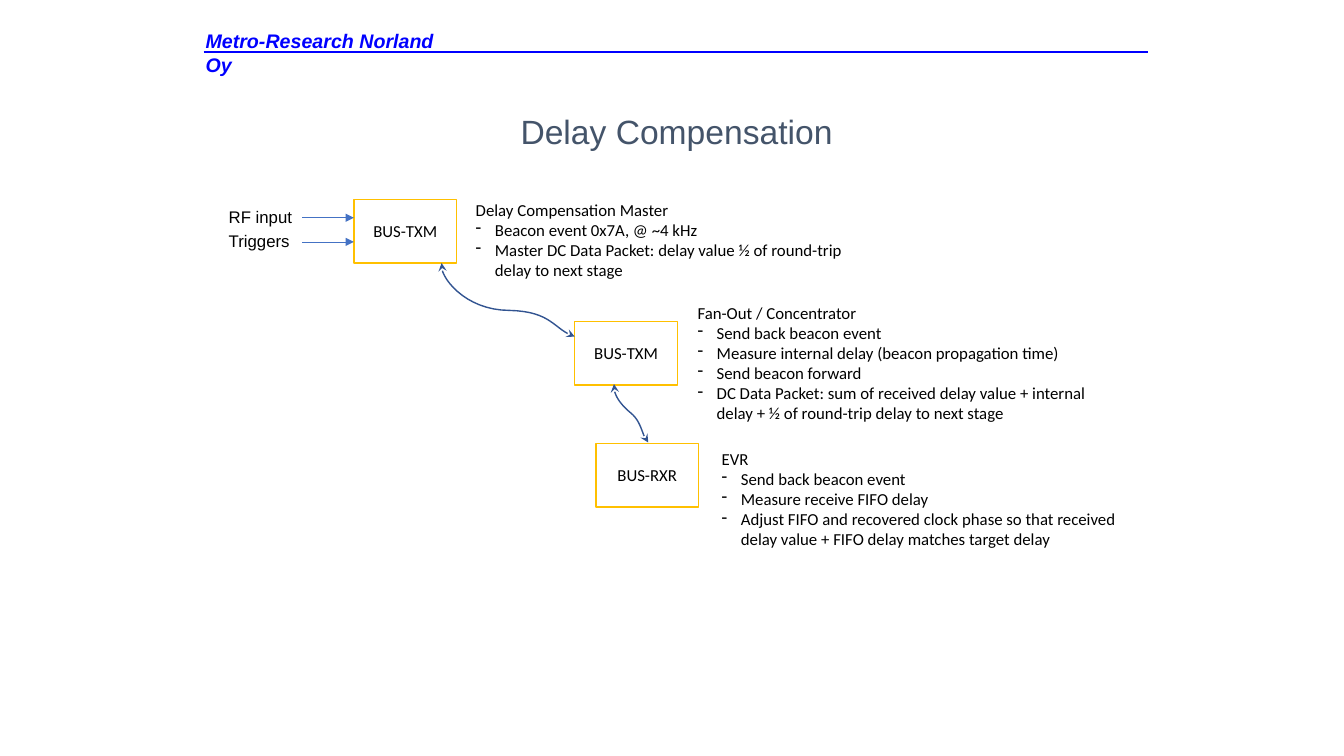
from lxml.etree import SubElement
from pptx import Presentation
from pptx.dml.color import RGBColor
from pptx.enum.shapes import MSO_CONNECTOR, MSO_SHAPE
from pptx.enum.text import MSO_ANCHOR, MSO_AUTO_SIZE, PP_ALIGN
from pptx.oxml.ns import qn
from pptx.util import Inches, Pt

WHITE = RGBColor(0xFF, 0xFF, 0xFF)
BLACK = RGBColor(0, 0, 0)
BLUE = RGBColor(0, 0, 0xFF)
SLATE = RGBColor(0x44, 0x54, 0x6A)
GOLD = RGBColor(0xFF, 0xC0, 0)
NAVY = RGBColor(0x32, 0x54, 0x91)
STEEL = RGBColor(0x44, 0x72, 0xC4)

STEPS = 16

BOXES = [
    ("BUS-TXM", 3.51, 1.98),
    ("BUS-TXM", 5.7, 3.19),
    ("BUS-RXR", 5.91, 4.4),
]
INPUTS = [("RF input", 2), ("Triggers", 2.24)]
NOTES = [
    ((4.62, 1.93, 3.85, 0.91), "Delay Compensation Master", [
        "Beacon event 0x7A, @ ~4 kHz",
        "Master DC Data Packet: delay value ½ of round-trip delay to next stage",
    ]),
    ((6.82, 2.95, 4.26, 1.31), "Fan-Out / Concentrator", [
        "Send back beacon event",
        "Measure internal delay (beacon propagation time)",
        "Send beacon forward",
        "DC Data Packet: sum of received delay value + internal delay"
        " + ½ of round-trip delay to next stage",
    ]),
    ((7.06, 4.4, 4.26, 1.11), "EVR", [
        "Send back beacon event",
        "Measure receive FIFO delay",
        "Adjust FIFO and recovered clock phase so that received delay value"
        " + FIFO delay matches target delay",
    ]),
]
# Each link is a start point followed by two cubic Bézier pieces.
LINKS = [
    [(4.38, 2.61), (4.35, 2.74), (4.61, 3.08), (5.05, 3.08),
     (5.48, 3.09), (5.49, 3.27), (5.7, 3.34)],
    [(6.09, 3.81), (6.08, 3.91), (6.15, 4.01), (6.26, 4.1),
     (6.37, 4.19), (6.37, 4.34), (6.43, 4.39)],
]


def add_run(para, text, size=12, font="Calibri", color=BLACK):
    run = para.add_run()
    run.text = text
    run.font.size = Pt(size)
    run.font.name = font
    run.font.color.rgb = color
    return run


def add_text(slide, left, top, width, height, wrap=True):
    """Add an empty text box and return its text frame."""
    box = slide.shapes.add_textbox(
        Inches(left), Inches(top), Inches(width), Inches(height))
    frame = box.text_frame
    frame.word_wrap = wrap
    return frame


def set_line(shape, color, width, head=None, tail=None):
    shape.line.color.rgb = color
    shape.line.width = Pt(width)
    line = shape.element.spPr.find(qn("a:ln"))
    for tag, kind in (("a:headEnd", head), ("a:tailEnd", tail)):
        if kind:
            SubElement(line, qn(tag), type=kind)


def add_line(slide, left, right, y, color, width, tail=None):
    line = slide.shapes.add_connector(
        MSO_CONNECTOR.STRAIGHT,
        Inches(left), Inches(y), Inches(right), Inches(y))
    set_line(line, color, width, tail=tail)
    SubElement(line.element.spPr, qn("a:effectLst"))


def add_box(slide, text, left, top):
    box = slide.shapes.add_shape(
        MSO_SHAPE.RECTANGLE,
        Inches(left), Inches(top), Inches(1.02), Inches(0.63))
    box.shadow.inherit = False
    box.fill.solid()
    box.fill.fore_color.rgb = WHITE
    set_line(box, GOLD, 1)
    box.text_frame.vertical_anchor = MSO_ANCHOR.MIDDLE
    para = box.text_frame.paragraphs[0]
    para.alignment = PP_ALIGN.CENTER
    add_run(para, text)


def trace(points):
    """Return points along a chain of cubic Bézier pieces."""
    path = [points[0]]
    for i in range(0, len(points) - 1, 3):
        piece = points[i:i + 4]
        for step in range(1, STEPS + 1):
            t = step / STEPS
            u = 1 - t
            parts = (u ** 3, 3 * u * u * t, 3 * u * t * t, t ** 3)
            path.append(tuple(
                sum(w * p[axis] for w, p in zip(parts, piece))
                for axis in (0, 1)))
    return [(Inches(x), Inches(y)) for x, y in path]


def add_link(slide, points):
    path = trace(points)
    build = slide.shapes.build_freeform(*path[0])
    build.add_line_segments(path[1:], close=False)
    link = build.convert_to_shape()
    link.shadow.inherit = False
    link.fill.background()
    set_line(link, NAVY, 1, "stealth", "stealth")


def add_note(slide, place, head, items):
    frame = add_text(slide, *place)
    add_run(frame.paragraphs[0], head)
    for item in items:
        para = frame.add_paragraph()
        props = para._p.get_or_add_pPr()
        props.set("marL", str(Inches(0.19)))
        props.set("indent", str(-Inches(0.19)))
        SubElement(props, qn("a:buChar"), char="-")
        add_run(para, item)


def set_title(slide, text):
    title = slide.shapes.title
    title.left, title.top = Inches(2.21), Inches(0.68)
    title.width, title.height = Inches(9), Inches(1.25)
    frame = title.text_frame
    frame.auto_size = MSO_AUTO_SIZE.NONE
    frame.vertical_anchor = MSO_ANCHOR.MIDDLE
    para = frame.paragraphs[0]
    para.alignment = PP_ALIGN.CENTER
    add_run(para, text, 24, "Arial", SLATE)


def add_brand(slide):
    frame = add_text(slide, 1.94, 0.24, 2.71, 0.33)
    run = add_run(frame.paragraphs[0], "Metro-Research Norland Oy",
                  14, "Arial", BLUE)
    run.font.bold = run.font.italic = True
    add_line(slide, 2.02, 11.39, 0.52, BLUE, 1.5)


def main():
    deck = Presentation()
    deck.slide_width, deck.slide_height = Inches(13.33), Inches(7.5)
    slide = deck.slides.add_slide(deck.slide_layouts[5])
    add_brand(slide)
    set_title(slide, "Delay Compensation")
    for box in BOXES:
        add_box(slide, *box)
    for link in LINKS:
        add_link(slide, link)
    for text, top in INPUTS:
        add_line(slide, 3, 3.51, top + 0.16, STEEL, 0.5, "triangle")
        frame = add_text(slide, 2.17, top, 0.84, 0.3, wrap=False)
        add_run(frame.paragraphs[0], text, font="Arial")
    for note in NOTES:
        add_note(slide, *note)
    deck.save("out.pptx")


if __name__ == "__main__":
    main()
